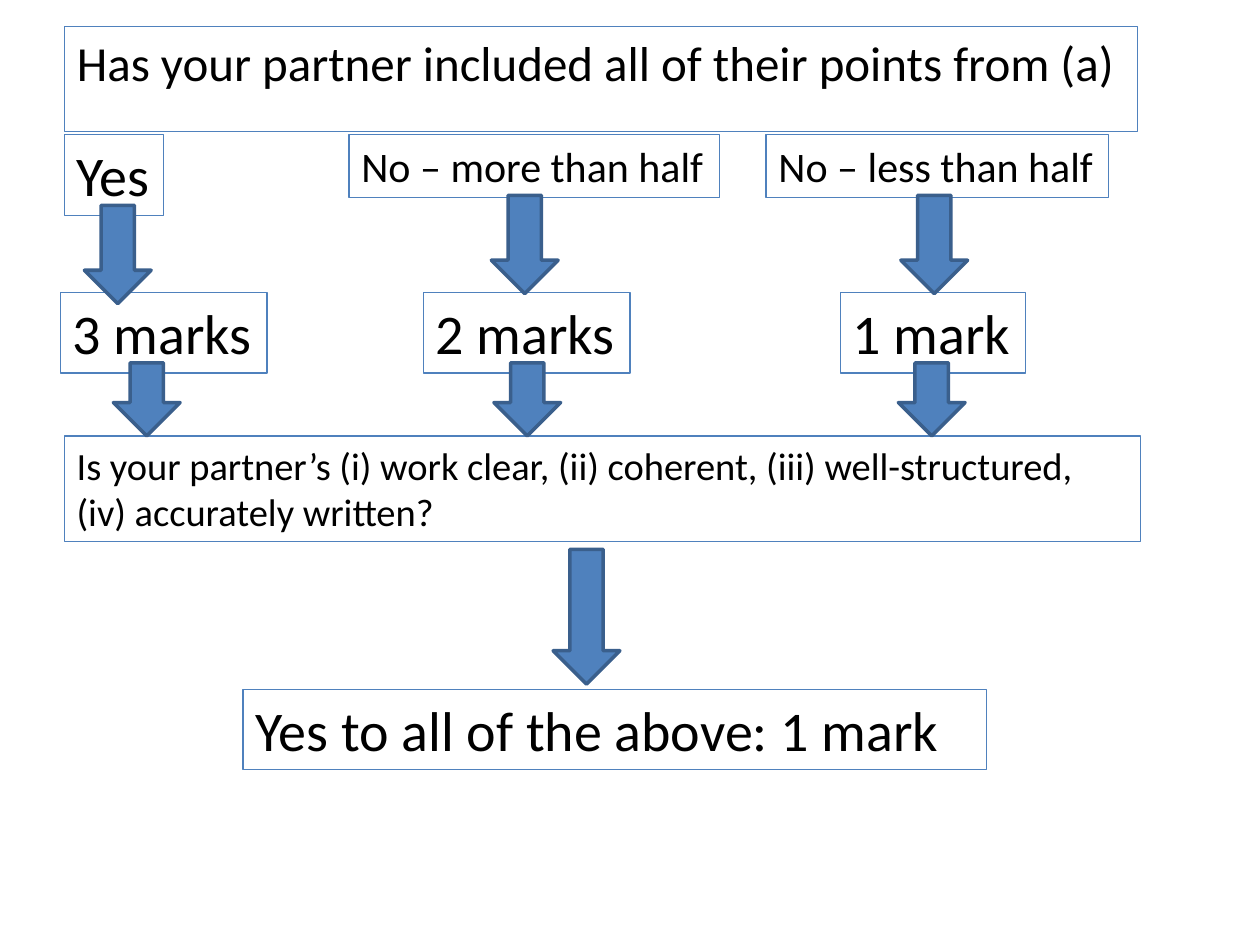
import pptx
import pptx.util
import pptx.dml.color
import pptx.enum.shapes
import pptx.enum.text

Inches, Pt = pptx.util.Inches, pptx.util.Pt
COLORS = {"text": "000000", "blue": "4F81BD", "arrow_edge": "3A5F8C"}
FONT = "Calibri"
ARROW_WIDTH = 0.53

# Content: text, (left, top, width, height), font size, wraps
QUESTION = ("Has your partner included all of their points from (a)",
            (0.51, 0.21, 8.52, 0.57), 28, True)
QUALITY = ("Is your partner’s (i) work clear, (ii) coherent, "
           "(iii) well-structured, (iv) accurately written?",
           (0.51, 3.46, 8.54, 0.84), 22, True)
RESULT = ("Yes to all of the above: 1 mark", (1.93, 5.47, 5.9, 0.64), 32, True)
ANSWERS = [
    ("Yes", (0.51, 1.07, 0.79, 0.64), 32, False),
    ("No – more than half", (2.77, 1.07, 2.94, 0.5), 24, False),
    ("No – less than half", (6.08, 1.07, 2.72, 0.5), 24, False),
]
MARKS = [
    ("3 marks", (0.48, 2.32, 1.64, 0.64), 32, False),
    ("2 marks", (3.36, 2.32, 1.64, 0.64), 32, False),
    ("1 mark", (6.67, 2.32, 1.47, 0.64), 32, False),
]
# Arrows: height, then the (left, top) of each arrow in the row
ARROW_ROWS = [
    (1.07, [(4.39, 4.36)]),
    (0.58, [(left, 2.88) for left in (0.9, 3.92, 7.13)]),
    (0.78, [(0.67, 1.63), (3.9, 1.55), (7.15, 1.55)]),
]


def rgb(name):
    return pptx.dml.color.RGBColor.from_string(COLORS[name])


def outline(shape, color, width):
    shape.line.color.rgb = rgb(color)
    shape.line.width = Pt(width)


def fill_box(box, text, place, size, wraps):
    box.left, box.top, box.width, box.height = map(Inches, place)
    outline(box, "blue", 0.75)
    frame = box.text_frame
    frame.text = text
    frame.word_wrap = wraps
    frame.auto_size = pptx.enum.text.MSO_AUTO_SIZE.SHAPE_TO_FIT_TEXT
    frame.vertical_anchor = pptx.enum.text.MSO_ANCHOR.TOP
    paragraph = frame.paragraphs[0]
    paragraph.alignment = pptx.enum.text.PP_ALIGN.LEFT
    paragraph.font.name = FONT
    paragraph.font.size = Pt(size)
    paragraph.font.color.rgb = rgb("text")


def add_arrow(slide, left, top, height):
    arrow = slide.shapes.add_shape(
        pptx.enum.shapes.MSO_SHAPE.DOWN_ARROW,
        *map(Inches, (left, top, ARROW_WIDTH, height)))
    arrow.shadow.inherit = False
    arrow.fill.solid()
    arrow.fill.fore_color.rgb = rgb("blue")
    outline(arrow, "arrow_edge", 2)


def main():
    deck = pptx.Presentation()
    deck.slide_width, deck.slide_height = Inches(10), Inches(7.5)
    slide = deck.slides.add_slide(deck.slide_layouts.get_by_name("Title Only"))

    # Opening question
    fill_box(slide.shapes.title, *QUESTION)

    # Answers, marks and the quality check
    for text, place, size, wraps in [QUALITY, *ANSWERS, *MARKS, RESULT]:
        box = slide.shapes.add_textbox(*map(Inches, place))
        fill_box(box, text, place, size, wraps)

    # Arrows between the steps
    for height, starts in ARROW_ROWS:
        for left, top in starts:
            add_arrow(slide, left, top, height)

    deck.save("out.pptx")


if __name__ == "__main__":
    main()
